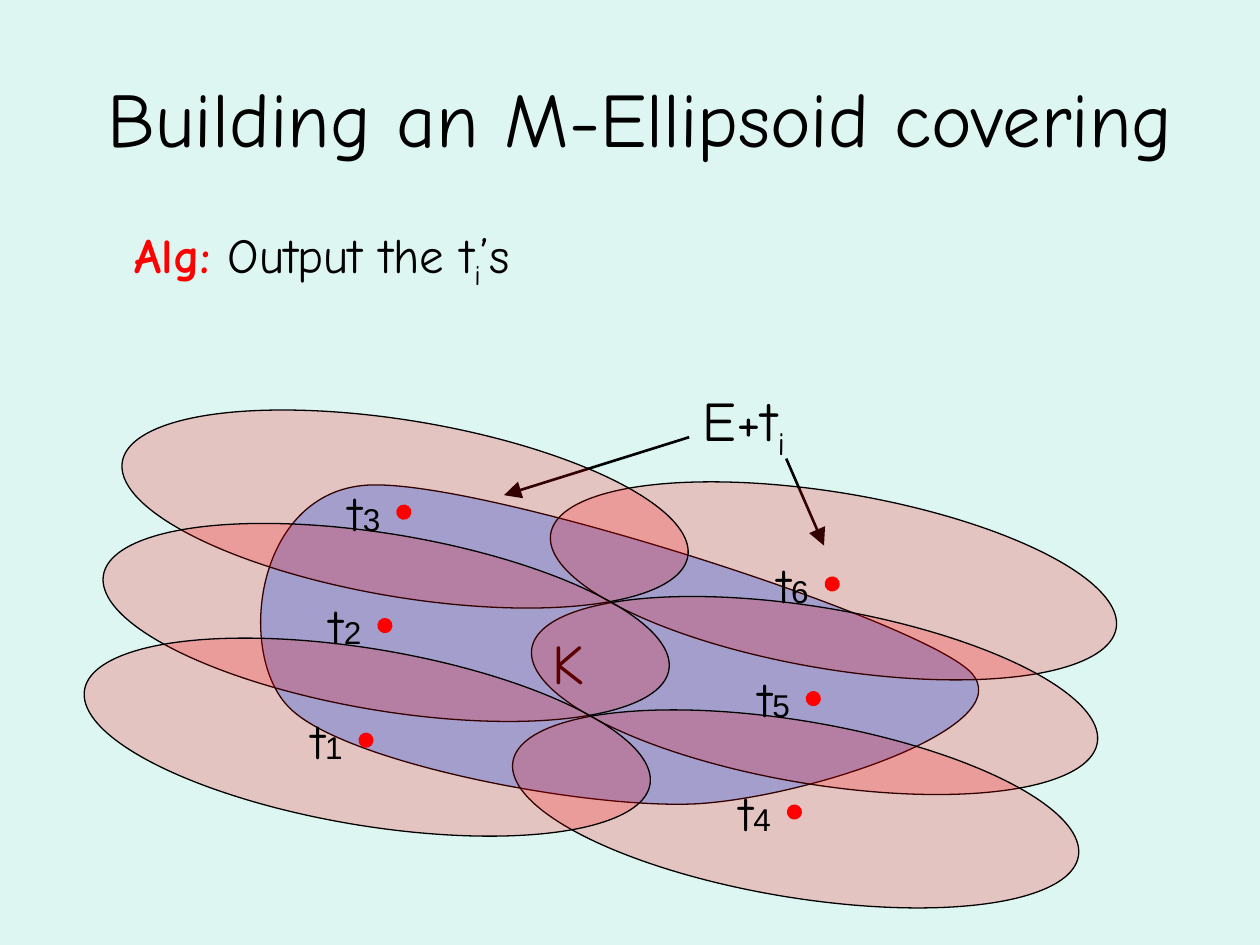
from lxml import etree
from pptx import Presentation
from pptx.dml.color import RGBColor
from pptx.enum.shapes import MSO_CONNECTOR, MSO_SHAPE
from pptx.enum.text import MSO_ANCHOR, MSO_AUTO_SIZE, PP_ALIGN
from pptx.oxml.ns import qn
from pptx.util import Pt

PX = 9144  # 100 px to the inch
COLORS = {"background": "DEF6F1", "body": "8DC6FF", "red": "FF0000", "black": "000000"}
FONT = "Comic Neue"

deck = Presentation()
deck.slide_width, deck.slide_height = 1000 * PX, 750 * PX
slide = deck.slides.add_slide(deck.slide_layouts[6])
slide.background.fill.solid()
slide.background.fill.fore_color.rgb = RGBColor.from_string(COLORS["background"])


def add_text(runs, box, size, wrap=False, align=PP_ALIGN.LEFT, anchor=MSO_ANCHOR.TOP):
    """Each run is its text and a dict of what differs from the plain format."""
    frame = slide.shapes.add_textbox(*(v * PX for v in box)).text_frame
    frame.word_wrap = wrap
    frame.auto_size = MSO_AUTO_SIZE.NONE if wrap else MSO_AUTO_SIZE.SHAPE_TO_FIT_TEXT
    frame.vertical_anchor = anchor
    paragraph = frame.paragraphs[0]
    paragraph.alignment = align
    for words, style in runs:
        run = paragraph.add_run()
        run.text = words
        run.font.name = style.get("font", FONT)
        run.font.size = Pt(style.get("size", size))
        run.font.bold = style.get("bold", False)
        run.font.color.rgb = RGBColor.from_string(COLORS[style.get("color", "black")])
        if "baseline" in style:
            run.font._element.set("baseline", str(style["baseline"]))
    return paragraph


def paint(shape, fill, line, opacity=100):
    shape.shadow.inherit = False
    shape.fill.solid()
    shape.fill.fore_color.rgb = RGBColor.from_string(COLORS[fill])
    shape.line.color.rgb = RGBColor.from_string(COLORS[line])
    shape.line.width = Pt(0.75)
    if opacity < 100:
        color = shape.fill._xPr.find(qn("a:solidFill"))[0]
        etree.SubElement(color, qn("a:alpha")).set("val", str(opacity * 1000))


SUBSCRIPT = {"baseline": -25000}

# Convex body K: each curve has two control points and an end point
curve_points = [
    (202, 390), (187, 520), (230, 562),
    (273, 605), (462, 642), (552, 638),
    (642, 633), (813, 576), (770, 533),
    (727, 491), (382, 380), (292, 385),
]
builder = slide.shapes.build_freeform(*curve_points[-1], scale=PX)
builder.add_line_segments(curve_points, close=True)
body = builder.convert_to_shape()
paint(body, "body", "black")

# Turn every three straight segments into one Bezier curve
segments = list(body._element.iter(qn("a:lnTo")))
for first in range(0, len(segments), 3):
    curve = etree.Element(qn("a:cubicBezTo"))
    segments[first].addprevious(curve)
    for segment in segments[first:first + 3]:
        curve.append(segment[0])
        segment.getparent().remove(segment)

# Algorithm line
algorithm = add_text(
    [("Alg: ", {"color": "red", "bold": True}), ("Output the t", {}), ("i", SUBSCRIPT), ("’s", {})],
    (97, 174, 619, 60), 28, wrap=True)
algorithm.line_spacing = 0.9
algorithm.space_before = Pt(5.6)
algorithm._p.get_or_add_pPr().set("marL", str(38 * PX))
algorithm._p.get_or_add_pPr().set("indent", str(-38 * PX))

# Arrows from E+t to two of the ellipsoids
for ends in [(547, 347, 400, 393), (624, 364, 654, 433)]:
    arrow = slide.shapes.add_connector(MSO_CONNECTOR.STRAIGHT, *(v * PX for v in ends))
    arrow.line.color.rgb = RGBColor.from_string(COLORS["black"])
    arrow.line.width = Pt(1.5)
    head = etree.SubElement(arrow.line._get_or_add_ln(), qn("a:tailEnd"))
    for key, value in [("type", "triangle"), ("w", "lg"), ("len", "lg")]:
        head.set(key, value)
    etree.SubElement(arrow._element.spPr, qn("a:effectLst"))

add_text([("K", {})], (429, 494, 47, 63), 32)

# Two columns of translated ellipsoids, each row shifted down and left
TILT = 9.5
ROW_SHIFT = (-15, 90.5)
corners = {}
for top_index, left, top in [(6, 434, 391), (3, 94, 334)]:
    for row in range(3):
        x = left + row * ROW_SHIFT[0]
        y = round(top + row * ROW_SHIFT[1])
        corners[top_index - row] = (x, y)
        ellipsoid = slide.shapes.add_shape(MSO_SHAPE.OVAL, x * PX, y * PX, 455 * PX, 140 * PX)
        paint(ellipsoid, "red", "black", opacity=20)
        ellipsoid.rotation = TILT
        dot = slide.shapes.add_shape(
            MSO_SHAPE.OVAL, (x + 221) * PX, (y + 67) * PX, 11 * PX, 11 * PX)
        paint(dot, "red", "red")
        dot.rotation = TILT

# Labels of the ellipsoids and their centers
add_text([("E+t", {}), ("i", SUBSCRIPT)], (548, 301, 98, 63), 32)
for index, (x, y) in corners.items():
    add_text([("t", {}), (str(index), {"font": "Arial", "size": 18})],
             (x + 173, y + 44, 52, 57), 28)

# Title
add_text([("Building an M-Ellipsoid covering", {})], (50, 30, 917, 125), 44,
         wrap=True, align=PP_ALIGN.CENTER, anchor=MSO_ANCHOR.MIDDLE)

deck.save("out.pptx")
